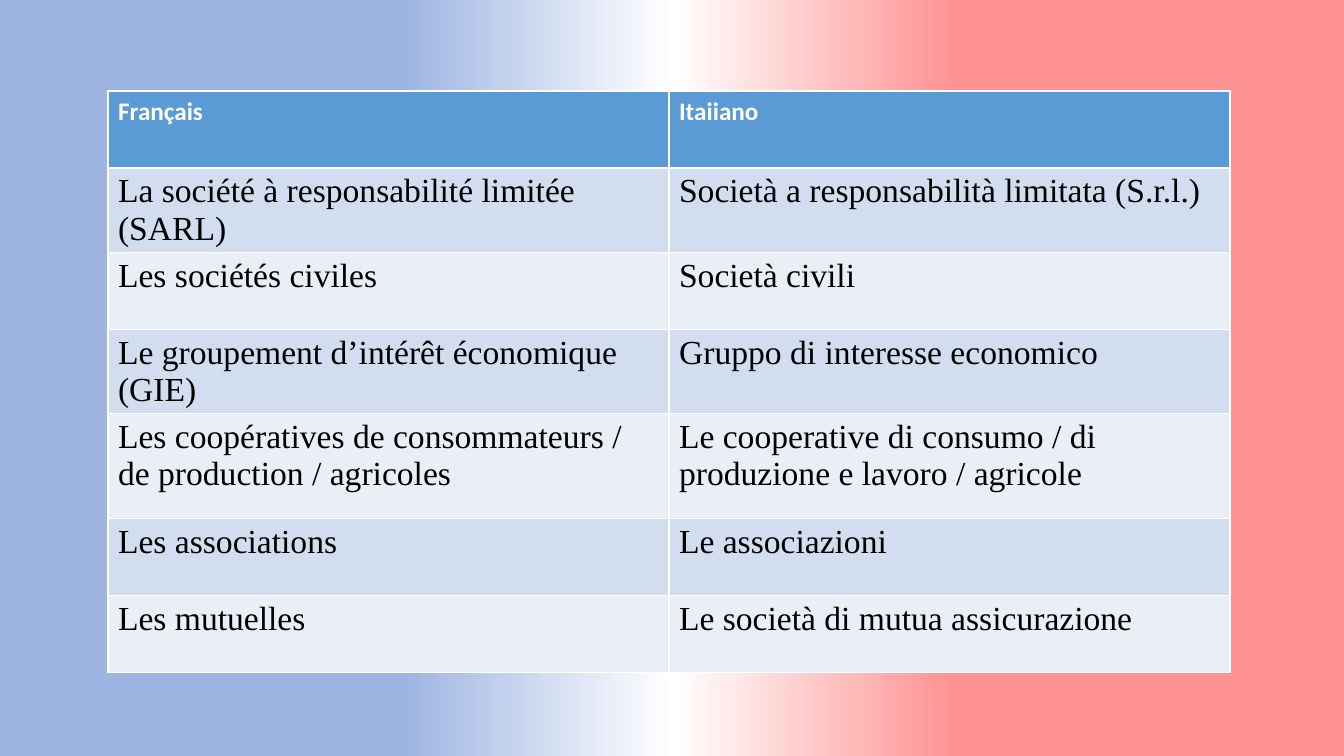
from copy import deepcopy

from pptx import Presentation
from pptx.dml.color import RGBColor
from pptx.util import Emu, Pt

TERMS = [
    ("Français", "Itaiiano"),
    ("La société à responsabilité limitée (SARL)", "Società a responsabilità limitata (S.r.l.)"),
    ("Les sociétés civiles", "Società civili"),
    ("Le groupement d’intérêt économique (GIE)", "Gruppo di interesse economico"),
    ("Les coopératives de consommateurs / de production / agricoles",
     "Le cooperative di consumo / di produzione e lavoro / agricole"),
    ("Les associations", "Le associazioni"),
    ("Les mutuelles", "Le società di mutua assicurazione"),
]
FLAG_STOPS = [(0.30, "9EB5E2"), (0.50, "FFFFFF"), (0.71, "FF9393")]
HEADER_FILL = "5B9BD5"
BAND_FILLS = ["EAEFF7", "D2DEEF"]
LEFT, TOP, COLUMN_WIDTH = 108, 91, 561
ROW_HEIGHTS = [77, 77, 77, 77, 105, 77, 77]


def px(length):
    return Emu(round(length * 914400 / 100.8))


def color(value):
    return RGBColor.from_string(value)


def paint_background(page):
    fill = page.background.fill
    fill.gradient()
    fill.gradient_angle = 0
    stop_list = page.element.xpath(".//p:bg//a:gsLst")[0]
    stop_list.append(deepcopy(stop_list[0]))
    for stop, (position, value) in zip(fill.gradient_stops, FLAG_STOPS):
        stop.position = position
        stop.color.rgb = color(value)


def fill_cell(cell, text, row):
    header = row == 0
    cell.fill.solid()
    cell.fill.fore_color.rgb = color(HEADER_FILL if header else BAND_FILLS[row % 2])
    cell.text = text
    font = cell.text_frame.paragraphs[0].font
    font.name = "Calibri" if header else "Times New Roman"
    font.size = Pt(18 if header else 24)
    font.bold = header
    font.color.rgb = color("FFFFFF" if header else "000000")


def main():
    deck = Presentation()
    deck.slide_width, deck.slide_height = px(1344), px(756)
    page = deck.slides.add_slide(deck.slide_layouts[6])
    paint_background(page)

    columns = len(TERMS[0])
    table = page.shapes.add_table(
        len(TERMS), columns, px(LEFT), px(TOP),
        px(columns * COLUMN_WIDTH), px(sum(ROW_HEIGHTS)),
    ).table
    for column in table.columns:
        column.width = px(COLUMN_WIDTH)
    for row, (height, texts) in enumerate(zip(ROW_HEIGHTS, TERMS)):
        table.rows[row].height = px(height)
        for column, text in enumerate(texts):
            fill_cell(table.cell(row, column), text, row)

    deck.save("out.pptx")


if __name__ == "__main__":
    main()
